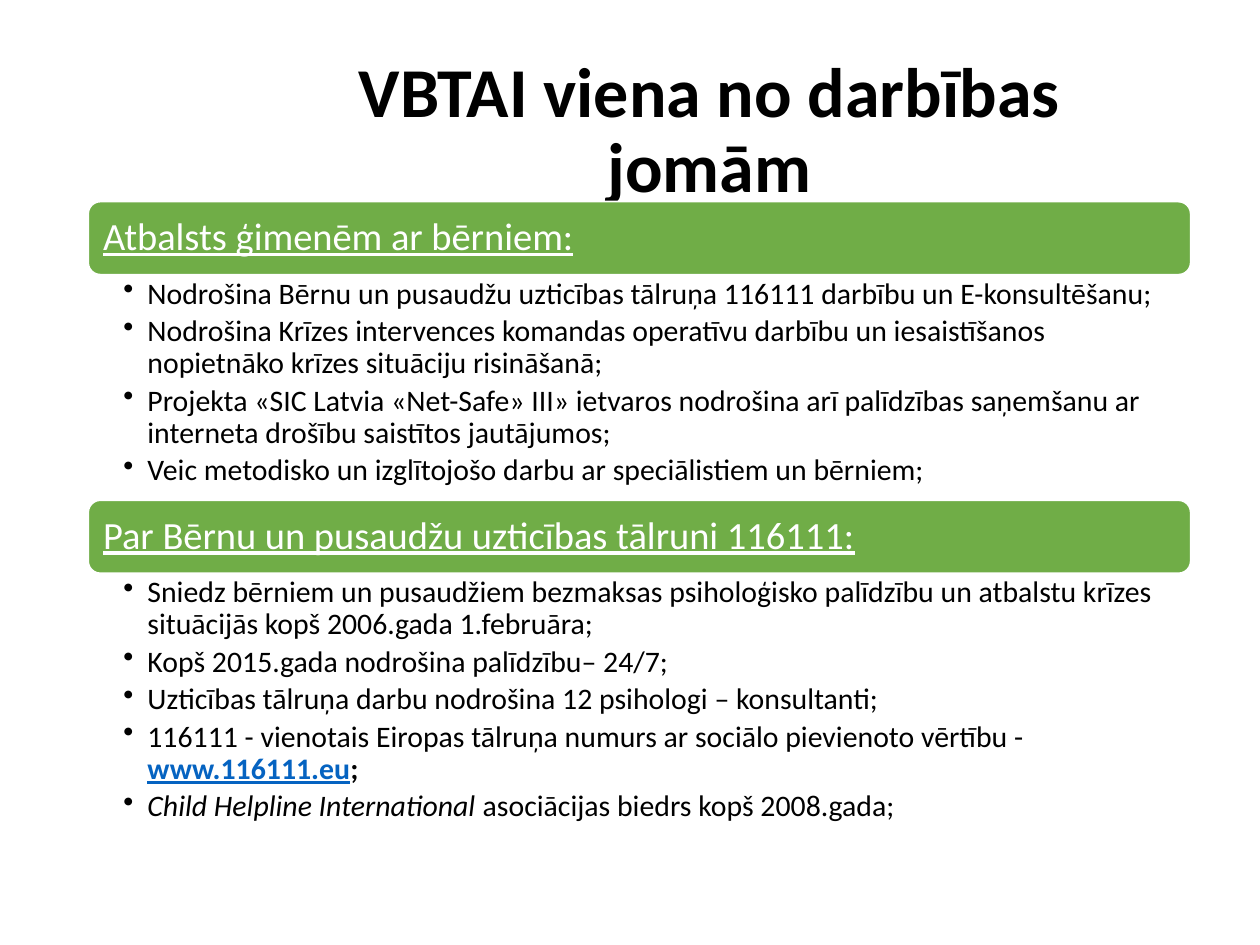
import pptx
import pptx.util
import pptx.dml.color
import pptx.enum.shapes
import pptx.enum.text
from lxml import etree

Inches, Pt = pptx.util.Inches, pptx.util.Pt
COLORS = {"bar": "70AD47", "white": "FFFFFF", "text": "000000", "link": "0563C1"}
FONT = "Calibri"
WIDTH, HEIGHT = 10, 7.5
LEFT, CONTENT_WIDTH = 0.07 * WIDTH, 0.875 * WIDTH
BAR_HEIGHT = 0.58
SECTIONS_TOP = 1.6

# Each section: heading, height of its list, bullets made of (text, style) spans.
SECTIONS = [
    ("Atbalsts ģimenēm ar bērniem:", 1.79, [
        [("Nodrošina Bērnu un pusaudžu uzticības tālruņa 116111 darbību un E-konsultēšanu;", {})],
        [("Nodrošina Krīzes intervences komandas operatīvu darbību un iesaistīšanos "
          "nopietnāko krīzes situāciju risināšanā;", {})],
        [("Projekta «SIC Latvia «Net-Safe» III» ietvaros nodrošina arī palīdzības saņemšanu "
          "ar interneta drošību saistītos jautājumos;", {})],
        [("Veic metodisko un izglītojošo darbu ar speciālistiem un bērniem;", {})],
    ]),
    ("Par Bērnu un pusaudžu uzticības tālruni 116111:", 2.14, [
        [("Sniedz bērniem un pusaudžiem bezmaksas psiholoģisko palīdzību un atbalstu krīzes "
          "situācijās kopš 2006.gada 1.februāra;", {})],
        [("Kopš 2015.gada nodrošina palīdzību– 24/7;", {})],
        [("Uzticības tālruņa darbu nodrošina 12 psihologi – konsultanti;", {})],
        [("116111 - vienotais Eiropas tālruņa numurs ar sociālo pievienoto vērtību - ", {}),
         ("www.116111.eu", {"color": "link", "bold": True, "underline": True}),
         (";", {"bold": True})],
        [("Child Helpline International ", {"italic": True}),
         ("asociācijas biedrs kopš 2008.gada;", {})],
    ]),
]


def rgb(name):
    return pptx.dml.color.RGBColor.from_string(COLORS[name])


def add_span(para, text, size, color="text", **styles):
    span = para.add_run()
    span.text = text
    span.font.name, span.font.size = FONT, Pt(size)
    span.font.color.rgb = rgb(color)
    for name, value in styles.items():
        setattr(span.font, name, value)


def set_frame(frame, margins, anchor):
    """Wrap the text and set left, top, right and bottom margins in inches."""
    frame.word_wrap = True
    frame.vertical_anchor = anchor
    sides = ("margin_left", "margin_top", "margin_right", "margin_bottom")
    for side, margin in zip(sides, margins):
        setattr(frame, side, Inches(margin))


def add_bullet(para):
    properties = para._p.get_or_add_pPr()
    properties.set("marL", str(Inches(0.19)))
    properties.set("indent", str(-Inches(0.19)))
    bullet = etree.SubElement(properties, pptx.oxml.ns.qn("a:buChar"))
    bullet.set("char", "•")


def add_title(page, box, text):
    shape = page.shapes.add_textbox(*map(Inches, box))
    set_frame(shape.text_frame, (0.1, 0.05, 0.1, 0.05), pptx.enum.text.MSO_ANCHOR.TOP)
    para = shape.text_frame.paragraphs[0]
    para.alignment = pptx.enum.text.PP_ALIGN.CENTER
    para.line_spacing = 0.9
    add_span(para, text, 40, bold=True)


def add_heading_bar(page, box, text):
    bar = page.shapes.add_shape(pptx.enum.shapes.MSO_SHAPE.ROUNDED_RECTANGLE, *map(Inches, box))
    bar.shadow.inherit = False
    bar.fill.solid()
    bar.fill.fore_color.rgb = rgb("bar")
    bar.line.color.rgb = rgb("white")
    bar.line.width = Pt(1)
    set_frame(bar.text_frame, (0.09,) * 4, pptx.enum.text.MSO_ANCHOR.MIDDLE)
    para = bar.text_frame.paragraphs[0]
    para.alignment = pptx.enum.text.PP_ALIGN.LEFT
    para.line_spacing = 0.9
    add_span(para, text, 22, "white", underline=True)


def add_bullet_list(page, box, bullets):
    shape = page.shapes.add_textbox(*map(Inches, box))
    frame = shape.text_frame
    set_frame(frame, (0.28, 0.03, 0.17, 0.03), pptx.enum.text.MSO_ANCHOR.TOP)
    for index, spans in enumerate(bullets):
        para = frame.add_paragraph() if index else frame.paragraphs[0]
        add_bullet(para)
        para.level = 1
        para.line_spacing = 0.9
        para.space_after = Pt(3)
        for text, styles in spans:
            add_span(para, text, 17, **styles)


def add_section(page, box, heading, bullets):
    left, top, width, height = box
    add_heading_bar(page, (left, top, width, BAR_HEIGHT), heading)
    add_bullet_list(page, (left, top + BAR_HEIGHT, width, height - BAR_HEIGHT), bullets)


def main():
    deck = pptx.Presentation()
    deck.slide_width, deck.slide_height = Inches(WIDTH), Inches(HEIGHT)
    page = deck.slides.add_slide(deck.slide_layouts[6])
    add_title(page, (1.94, 0.4, 7.38, 0.88), "VBTAI viena no darbības jomām")
    top = SECTIONS_TOP
    for heading, list_height, bullets in SECTIONS:
        height = BAR_HEIGHT + list_height
        add_section(page, (LEFT, top, CONTENT_WIDTH, height), heading, bullets)
        top += height
    deck.save("out.pptx")


if __name__ == "__main__":
    main()
